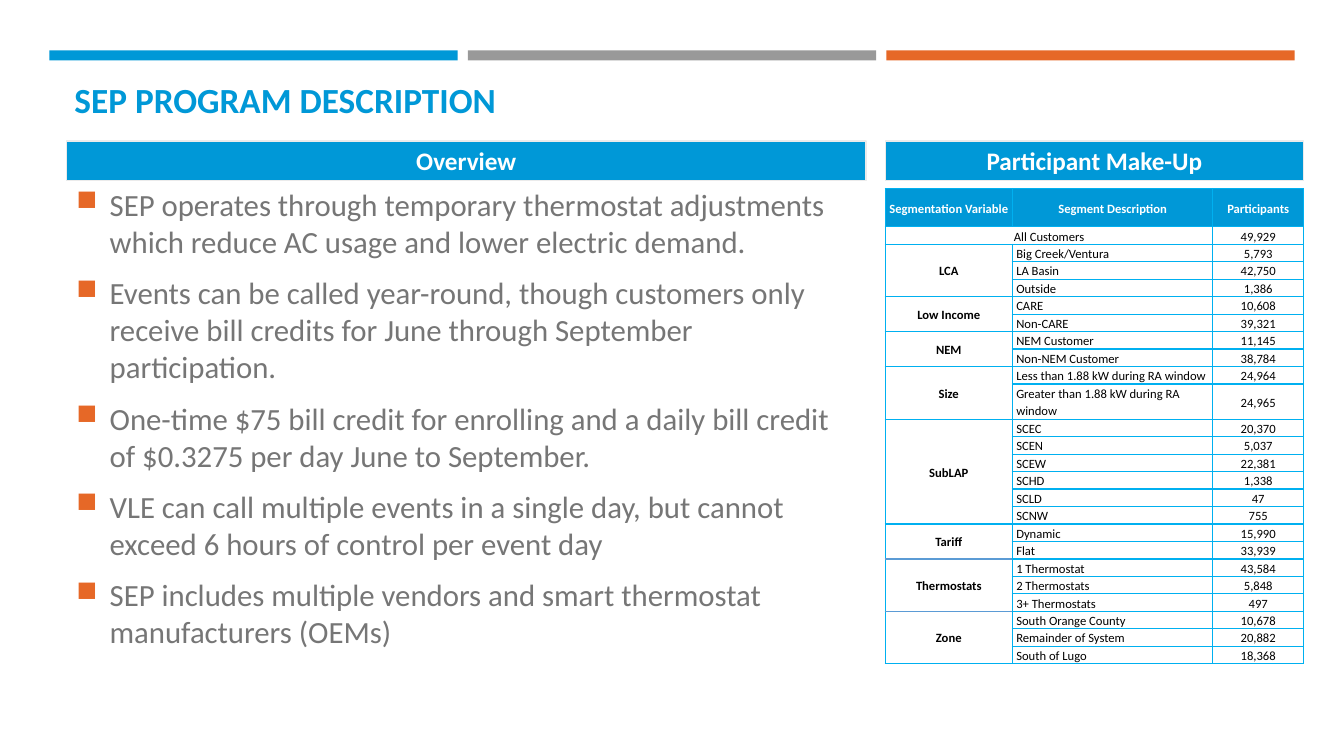
from dataclasses import dataclass

from lxml import etree
from pptx import Presentation
from pptx import util as u
from pptx.dml.color import RGBColor
from pptx.enum import shapes, text
from pptx.oxml.ns import qn

PX = 9144  # one hundredth of an inch in EMU


@dataclass(frozen=True)
class Theme:
    font: str = "Calibri"
    blue: str = "0098D7"
    grey: str = "999999"
    orange: str = "E66827"
    body: str = "767676"
    white: str = "FFFFFF"
    black: str = "000000"
    frame: str = "EBEBEB"
    grid: str = "00B0F0"
    soft_grid: str = "5B9BD5"
    title_size: float = 25.2
    body_size: float = 22
    header_size: float = 18
    table_size: float = 9


BULLETS = [
    "SEP operates through temporary thermostat adjustments which reduce AC usage "
    "and lower electric demand.",
    "Events can be called year-round, though customers only receive bill credits "
    "for June through September participation.",
    "One-time $75 bill credit for enrolling and a daily bill credit of $0.3275 per "
    "day June to September.",
    "VLE can call multiple events in a single day, but cannot exceed 6 hours of "
    "control per event day",
    "SEP includes multiple vendors and smart thermostat manufacturers (OEMs)",
]
HEADINGS = ["Segmentation Variable", "Segment Description", "Participants"]
TOTAL = ("All Customers", "49,929")
LONG_SEGMENT = "Greater than 1.88 kW during RA window"
SEGMENTS = {
    "LCA": [("Big Creek/Ventura", "5,793"), ("LA Basin", "42,750"), ("Outside", "1,386")],
    "Low Income": [("CARE", "10,608"), ("Non-CARE", "39,321")],
    "NEM": [("NEM Customer", "11,145"), ("Non-NEM Customer", "38,784")],
    "Size": [("Less than 1.88 kW during RA window", "24,964"), (LONG_SEGMENT, "24,965")],
    "SubLAP": [("SCEC", "20,370"), ("SCEN", "5,037"), ("SCEW", "22,381"),
               ("SCHD", "1,338"), ("SCLD", "47"), ("SCNW", "755")],
    "Tariff": [("Dynamic", "15,990"), ("Flat", "33,939")],
    "Thermostats": [("1 Thermostat", "43,584"), ("2 Thermostats", "5,848"),
                    ("3+ Thermostats", "497")],
    "Zone": [("South Orange County", "10,678"), ("Remainder of System", "20,882"),
             ("South of Lugo", "18,368")],
}
SOFT_TOP = {"Thermostats", "Zone"}
SOFT_BOTTOM = {"Tariff", "Thermostats"}


def rgb(color):
    return RGBColor.from_string(color)


class SlideBuilder:
    def __init__(self, page, theme):
        self.page = page
        self.theme = theme

    def add_span(self, para, words, size, color, bold=False, align=text.PP_ALIGN.LEFT):
        para.alignment = align
        span = para.add_run()
        span.text = words
        span.font.name = self.theme.font
        span.font.size = u.Pt(size)
        span.font.bold = bold
        span.font.color.rgb = rgb(color)

    def bar(self, left, top, width, height, color, outline=None):
        box = self.page.shapes.add_shape(
            shapes.MSO_SHAPE.RECTANGLE, left * PX, top * PX, width * PX, height * PX)
        box.shadow.inherit = False
        box.fill.solid()
        box.fill.fore_color.rgb = rgb(color)
        if outline:
            box.line.color.rgb = rgb(outline)
            box.line.width = u.Pt(1)
        else:
            box.line.fill.background()
        return box

    def header(self, left, width, words):
        box = self.bar(left, 140, width, 39, self.theme.blue, self.theme.frame)
        frame = box.text_frame
        frame.margin_top = frame.margin_bottom = 4 * PX
        frame.vertical_anchor = text.MSO_ANCHOR.MIDDLE
        self.add_span(frame.paragraphs[0], words, self.theme.header_size,
                      self.theme.white, True, text.PP_ALIGN.CENTER)

    def text_frame(self, left, top, width, height, anchor):
        box = self.page.shapes.add_textbox(left * PX, top * PX, width * PX, height * PX)
        box.text_frame.word_wrap = True
        box.text_frame.vertical_anchor = anchor
        return box.text_frame

    def title(self, words):
        frame = self.text_frame(64, 77, 1206, 48, text.MSO_ANCHOR.BOTTOM)
        self.add_span(frame.paragraphs[0], words, self.theme.title_size,
                      self.theme.blue, True)

    def bullet(self, para):
        """Give the paragraph a hanging square marker."""
        props = para._p.get_or_add_pPr()
        props.set("marL", str(33 * PX))
        props.set("indent", str(-33 * PX))
        color = etree.SubElement(props, qn("a:buClr"))
        etree.SubElement(color, qn("a:srgbClr"), val=self.theme.orange)
        etree.SubElement(props, qn("a:buSzPct"), val="92000")
        etree.SubElement(props, qn("a:buChar"), char="■")

    def bullet_list(self, items):
        frame = self.text_frame(66, 179, 793, 491, text.MSO_ANCHOR.TOP)
        for index, item in enumerate(items):
            para = frame.add_paragraph() if index else frame.paragraphs[0]
            self.bullet(para)
            para.space_after = u.Pt(10.4)
            self.add_span(para, item, self.theme.body_size, self.theme.body)

    def borders(self, cell, top, bottom):
        props = cell._tc.get_or_add_tcPr()
        sides = {"L": self.theme.grid, "R": self.theme.grid, "T": top, "B": bottom}
        for index, (side, color) in enumerate(sides.items()):
            line = etree.Element(qn(f"a:ln{side}"), w=str(u.Pt(1)))
            fill = etree.SubElement(line, qn("a:solidFill"))
            etree.SubElement(fill, qn("a:srgbClr"), val=color)
            props.insert(index, line)

    def fill_cell(self, cell, words, color, bold=False, align=text.PP_ALIGN.CENTER):
        cell.margin_left = cell.margin_right = 4 * PX
        cell.margin_top = cell.margin_bottom = 0
        cell.vertical_anchor = text.MSO_ANCHOR.MIDDLE
        para = cell.text_frame.paragraphs[0]
        para.line_spacing = 1.15
        self.add_span(para, words, self.theme.table_size, color, bold, align)

    def segment_table(self):
        theme = self.theme
        count = 2 + sum(len(rows) for rows in SEGMENTS.values())
        table = self.page.shapes.add_table(
            count, 3, 878 * PX, 187 * PX, 415 * PX, 476 * PX).table
        table.first_row = table.horz_banding = False
        for column, width in zip(table.columns, (126, 199, 90)):
            column.width = width * PX
        for row in table.rows:
            row.height = 17 * PX
        table.rows[0].height = 38 * PX
        for cell in table.iter_cells():
            cell.fill.background()

        for col, words in enumerate(HEADINGS):
            cell = table.cell(0, col)
            cell.fill.solid()
            cell.fill.fore_color.rgb = rgb(theme.blue)
            self.fill_cell(cell, words, theme.white, True)
        table.cell(1, 0).merge(table.cell(1, 1))
        for col, words in zip((0, 2), TOTAL):
            self.fill_cell(table.cell(1, col), words, theme.black)

        group_edges = {}
        first = 2
        for name, rows in SEGMENTS.items():
            last = first + len(rows) - 1
            table.cell(first, 0).merge(table.cell(last, 0))
            self.fill_cell(table.cell(first, 0), name, theme.black, True)
            top = theme.soft_grid if name in SOFT_TOP else theme.grid
            bottom = theme.soft_grid if name in SOFT_BOTTOM else theme.grid
            for row, (segment, participants) in enumerate(rows, first):
                self.fill_cell(table.cell(row, 1), segment, theme.black,
                               align=text.PP_ALIGN.LEFT)
                self.fill_cell(table.cell(row, 2), participants, theme.black)
                group_edges[row, 0] = (top, bottom)
                if segment == LONG_SEGMENT:
                    table.rows[row].height = 35 * PX
            first = last + 1
        for row in range(count):
            for col in range(3):
                edges = group_edges.get((row, col), (theme.grid, theme.grid))
                self.borders(table.cell(row, col), *edges)


def main():
    deck = Presentation()
    deck.slide_width, deck.slide_height = 1333 * PX, 750 * PX
    theme = Theme()
    slide = SlideBuilder(deck.slides.add_slide(deck.slide_layouts[6]), theme)
    for index, color in enumerate((theme.blue, theme.grey, theme.orange)):
        slide.bar(49 + 415 * index, 50, 405, 10, color)
    slide.bullet_list(BULLETS)
    slide.title("SEP PROGRAM DESCRIPTION")
    slide.header(66, 793, "Overview")
    slide.header(878, 415, "Participant Make-Up")
    slide.segment_table()
    deck.save("out.pptx")


if __name__ == "__main__":
    main()
